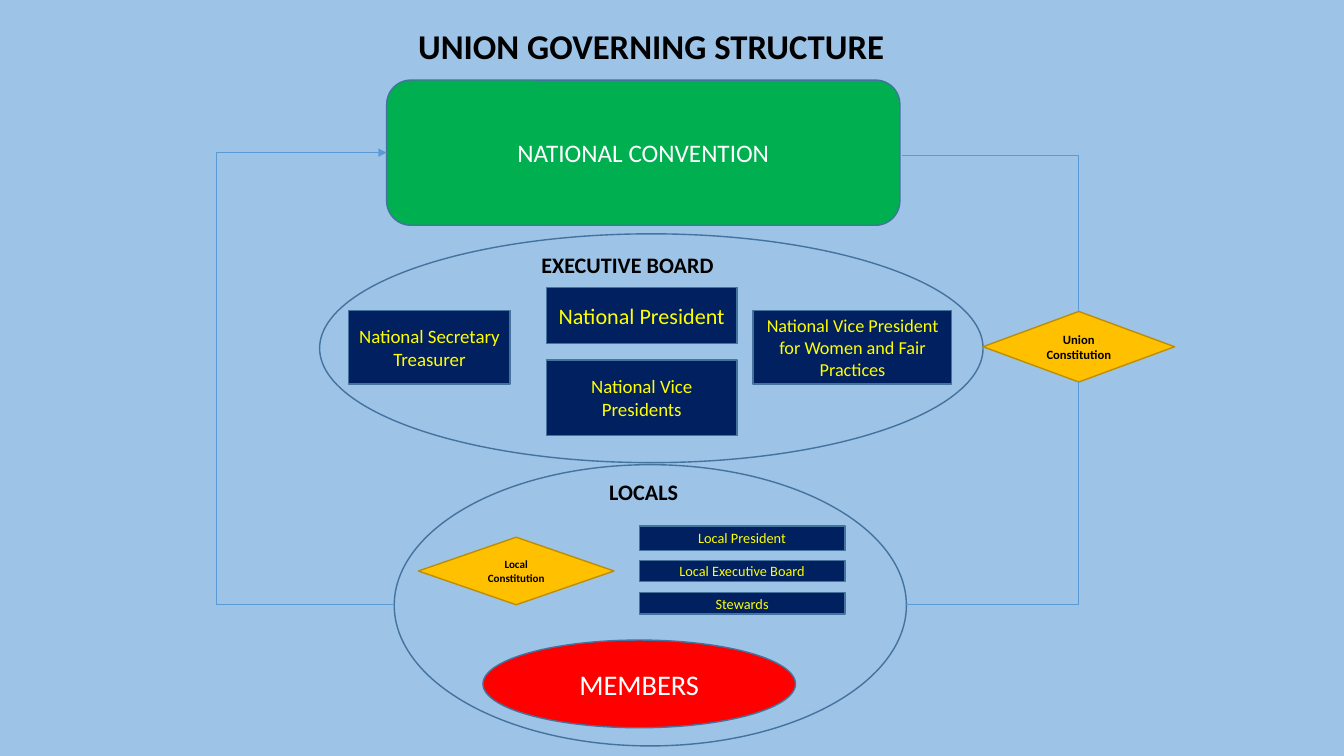
from pptx import Presentation
from pptx.dml.color import RGBColor
from pptx.enum.shapes import MSO_CONNECTOR, MSO_SHAPE
from pptx.enum.text import MSO_ANCHOR, PP_ALIGN
from pptx.oxml.ns import qn
from pptx.util import Inches, Pt
from lxml.etree import SubElement

NAVY, GOLD, BLACK, WHITE, YELLOW = "002060", "FFC000", "000000", "FFFFFF", "FFFF00"
EDGE, RUST, WIRE = "43739E", "BD8E00", "5B9BD5"


def hue(code):
    return RGBColor.from_string(code)


def unit(count):
    return Inches(count / 10)


def write(frame, text, size=13.5, color=BLACK, bold=False, align=PP_ALIGN.CENTER,
          anchor=MSO_ANCHOR.MIDDLE, pad=(0.1, 0.05)):
    frame.word_wrap = True
    frame.vertical_anchor = anchor
    frame.margin_left = frame.margin_right = Inches(pad[0])
    frame.margin_top = frame.margin_bottom = Inches(pad[1])
    for i, line in enumerate(text.split("\n")):
        para = frame.add_paragraph() if i else frame.paragraphs[0]
        para.alignment = align
        run = para.add_run()
        run.text = line
        font = run.font
        font.name, font.size, font.bold = "Calibri", Pt(size), bold
        font.color.rgb = hue(color)


class Chart:
    font = {"pad": (0.03, 0.02)}

    def __init__(self, deck, back):
        self.slide = deck.slides.add_slide(deck.slide_layouts[5])
        fill = self.slide.background.fill
        fill.solid()
        fill.fore_color.rgb = hue(back)

    def title(self, text, area):
        head = self.slide.shapes.title
        head.left, head.top, head.width, head.height = map(unit, area)
        write(head.text_frame, text, size=24.8, bold=True, anchor=MSO_ANCHOR.TOP)

    def label(self, text, area, **style):
        box = self.slide.shapes.add_textbox(*map(unit, area))
        write(box.text_frame, text, size=15.8, bold=True, anchor=MSO_ANCHOR.TOP, **style)

    def shape(self, kind, area, fill=None, edge=EDGE):
        item = self.slide.shapes.add_shape(kind, *map(unit, area))
        item.shadow.inherit = False
        if fill:
            item.fill.solid()
            item.fill.fore_color.rgb = hue(fill)
        else:
            item.fill.background()
        item.line.color.rgb = hue(edge)
        item.line.width = Pt(1)
        return item

    def block(self, kind, text, area, fill, **style):
        item = self.shape(kind, area, fill)
        write(item.text_frame, text, **self.font, **style)
        return item

    def office(self, text, area, size):
        self.block(MSO_SHAPE.RECTANGLE, text, area, NAVY, size=size, color=YELLOW)

    def rules(self, text, area, size):
        item = self.shape(MSO_SHAPE.DIAMOND, area, GOLD, RUST)
        write(item.text_frame, text, size=size, bold=True)
        return item

    def wire(self, start, stop, goal, site, bend=None):
        link = self.slide.shapes.add_connector(MSO_CONNECTOR.ELBOW, *map(unit, start + stop))
        link.end_connect(goal, site)
        link.line.color.rgb = hue(WIRE)
        link.line.width = Pt(0.5)
        props = link._element.spPr
        SubElement(props, qn("a:effectLst"))
        form = props.find(qn("a:prstGeom"))
        if bend is None:
            form.set("prst", "bentConnector2")
        else:
            share = (unit(bend) - link.begin_x) / (link.end_x - link.begin_x)
            SubElement(form.find(qn("a:avLst")), qn("a:gd"),
                       name="adj1", fmla=f"val {round(share * 100000)}")
            SubElement(props.find(qn("a:ln")), qn("a:tailEnd"), type="triangle")


def main():
    deck = Presentation()
    deck.slide_width, deck.slide_height = Inches(13.33), Inches(7.5)
    chart = Chart(deck, "9DC3E6")
    chart.title("UNION GOVERNING STRUCTURE", (33.1, 2, 63, 5.2))
    hall = chart.block(MSO_SHAPE.ROUNDED_RECTANGLE, "NATIONAL CONVENTION",
                       (38.35, 7.95, 50.9, 14.4), "00B050", size=18, color=WHITE)

    chart.shape(MSO_SHAPE.OVAL, (31.7, 23.2, 65.8, 22.7))
    chart.label("EXECUTIVE BOARD", (52.7, 24.5, 26.2, 3.7), align=PP_ALIGN.LEFT)
    for text, area, size in (
        ("National President", (54.2, 28.5, 18.9, 5.6), 15.8),
        ("National Vice Presidents", (54.2, 35.7, 18.9, 7.5), 13.5),
        ("National Secretary Treasurer", (34.6, 30.8, 16, 7.3), 13.5),
        ("National Vice President for Women and Fair Practices", (74.7, 30.8, 19.7, 7.3), 13),
    ):
        chart.office(text, area, size)
    charter = chart.rules("Union\nConstitution", (97.5, 30.9, 19, 7), 9)

    chart.shape(MSO_SHAPE.OVAL, (39.1, 46.1, 50.8, 27.9))
    chart.label("LOCALS", (56.1, 47, 15.5, 3.7))
    for text, top, tall in (("Local President", 52.2, 2.4),
                            ("Local Executive Board", 55.6, 2.1),
                            ("Stewards", 58.8, 2.1)):
        chart.office(text, (63.4, top, 20.4, tall), 10.2)
    chart.rules("Local\nConstitution", (41.5, 53.3, 19.4, 6.7), 7.9)
    chart.block(MSO_SHAPE.OVAL, "MEMBERS", (47.9, 63.5, 31, 8.7), "FF0000",
                size=20.3, color=WHITE)

    chart.wire((89.5, 15.4), (107, 30.9), charter, 0)
    chart.wire((89.9, 60), (107, 37.9), charter, 2)
    chart.wire((39.1, 60), (38.4, 15.1), hall, 1, bend=21.5)
    deck.save("out.pptx")


if __name__ == "__main__":
    main()
